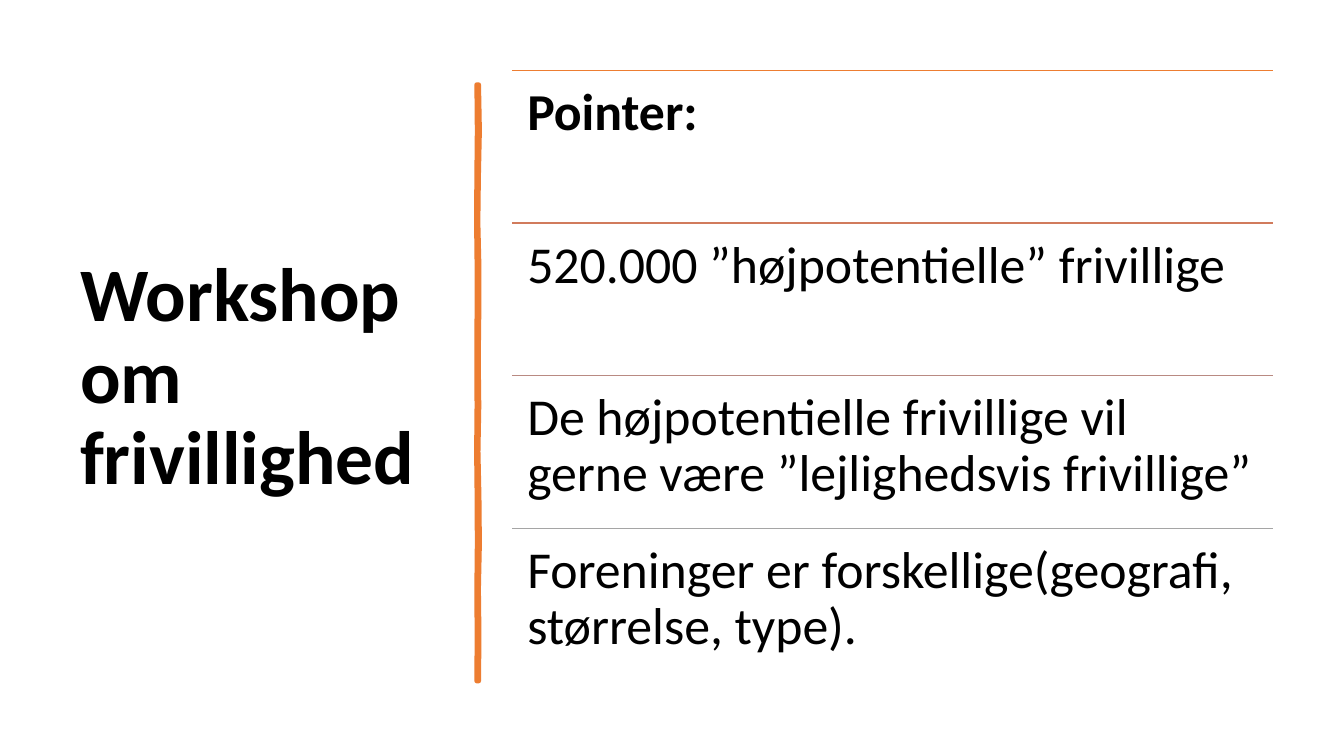
from lxml import etree
from pptx import Presentation
from pptx.dml.color import RGBColor
from pptx.enum import shapes, text
from pptx.oxml import ns
from pptx.util import Pt

BLACK = RGBColor(0x00, 0x00, 0x00)
ORANGE = RGBColor(0xED, 0x7D, 0x31)
RUST = RGBColor(0xD1, 0x7B, 0x5C)
MAUVE = RGBColor(0xB9, 0x8A, 0x82)
GREY = RGBColor(0xA5, 0xA5, 0xA5)

POINTS = [
    ("Pointer:", ORANGE, True),
    ("520.000 ”højpotentielle” frivillige", RUST, False),
    ("De højpotentielle frivillige vil gerne være ”lejlighedsvis frivillige”", MAUVE, False),
    ("Foreninger er forskellige(geografi, størrelse, type).", GREY, False),
]
WOBBLE = [0, 0.6, -0.1, -0.5, 0.3, 0.2, -0.2, 0.2, -0.4, 0.3, 0.6, -0.1, 0.3, 0]


def place(shape, left, top, width, height):
    """Set the position and size of a shape in points."""
    box = {"left": left, "top": top, "width": width, "height": height}
    for name, value in box.items():
        setattr(shape, name, Pt(value))


def write(shape, words, size, bold, anchor, inset):
    """Fill a shape with one left-aligned paragraph."""
    frame = shape.text_frame
    layout = {"word_wrap": True, "auto_size": text.MSO_AUTO_SIZE.NONE, "vertical_anchor": anchor}
    layout.update({f"margin_{side}": Pt(inset) for side in ("left", "top", "right", "bottom")})
    for name, value in layout.items():
        setattr(frame, name, value)
    para = frame.paragraphs[0]
    para.alignment = text.PP_ALIGN.LEFT
    para.line_spacing = 0.9
    span = para.add_run()
    span.text = words
    for name, value in {"name": "Calibri", "size": Pt(size), "bold": bold}.items():
        setattr(span.font, name, value)
    span.font.color.rgb = BLACK


def add_heading(page, left, top, width, height):
    """Place the slide title, centred vertically in its box."""
    title = page.shapes.title
    place(title, left, top, width, height)
    write(title, "Workshop om frivillighed", 54, True, text.MSO_ANCHOR.MIDDLE, 7.2)


def add_brush_stroke(page, left, top, width, height):
    """Draw the uneven vertical divider."""
    step = height / (len(WOBBLE) - 1)
    right_edge = [(Pt(left + width + shift), Pt(top + index * step))
                  for index, shift in enumerate(WOBBLE)]
    left_edge = [(Pt(left + shift / 2), Pt(top + index * step))
                 for index, shift in enumerate(WOBBLE)]
    outline = right_edge + left_edge[::-1]
    builder = page.shapes.build_freeform(*outline[0])
    builder.add_line_segments(outline[1:], close=True)
    stroke = builder.convert_to_shape()
    stroke.shadow.inherit = False
    stroke.fill.solid()
    stroke.fill.fore_color.rgb = ORANGE
    stroke.line.color.rgb = ORANGE
    stroke.line.width = Pt(3.25)
    etree.SubElement(stroke.line._get_or_add_ln(), ns.qn("a:round"))


def add_points(page, left, top, width, height):
    """Stack the points in equal rows, each under a coloured rule."""
    row = height / len(POINTS)
    for index, (words, color, bold) in enumerate(POINTS):
        y = top + index * row
        rule = page.shapes.add_connector(
            shapes.MSO_CONNECTOR.STRAIGHT, Pt(left), Pt(y), Pt(left + width), Pt(y))
        rule.line.color.rgb = color
        rule.line.width = Pt(1)
        etree.SubElement(rule._element.spPr, ns.qn("a:effectLst"))
        box = page.shapes.add_textbox(Pt(left), Pt(y), Pt(width), Pt(row))
        write(box, words, 37, bold, text.MSO_ANCHOR.TOP, 10.8)


def main():
    """Build and save the workshop slide."""
    deck = Presentation()
    deck.slide_width, deck.slide_height = Pt(960), Pt(540)
    page = deck.slides.add_slide(deck.slide_layouts.get_by_name("Title Only"))
    add_heading(page, 50, 50.4, 269, 440)
    add_brush_stroke(page, 340.5, 60.5, 1.5, 426)
    add_points(page, 365.8, 50.4, 543.6, 436)
    deck.save("out.pptx")


if __name__ == "__main__":
    main()
